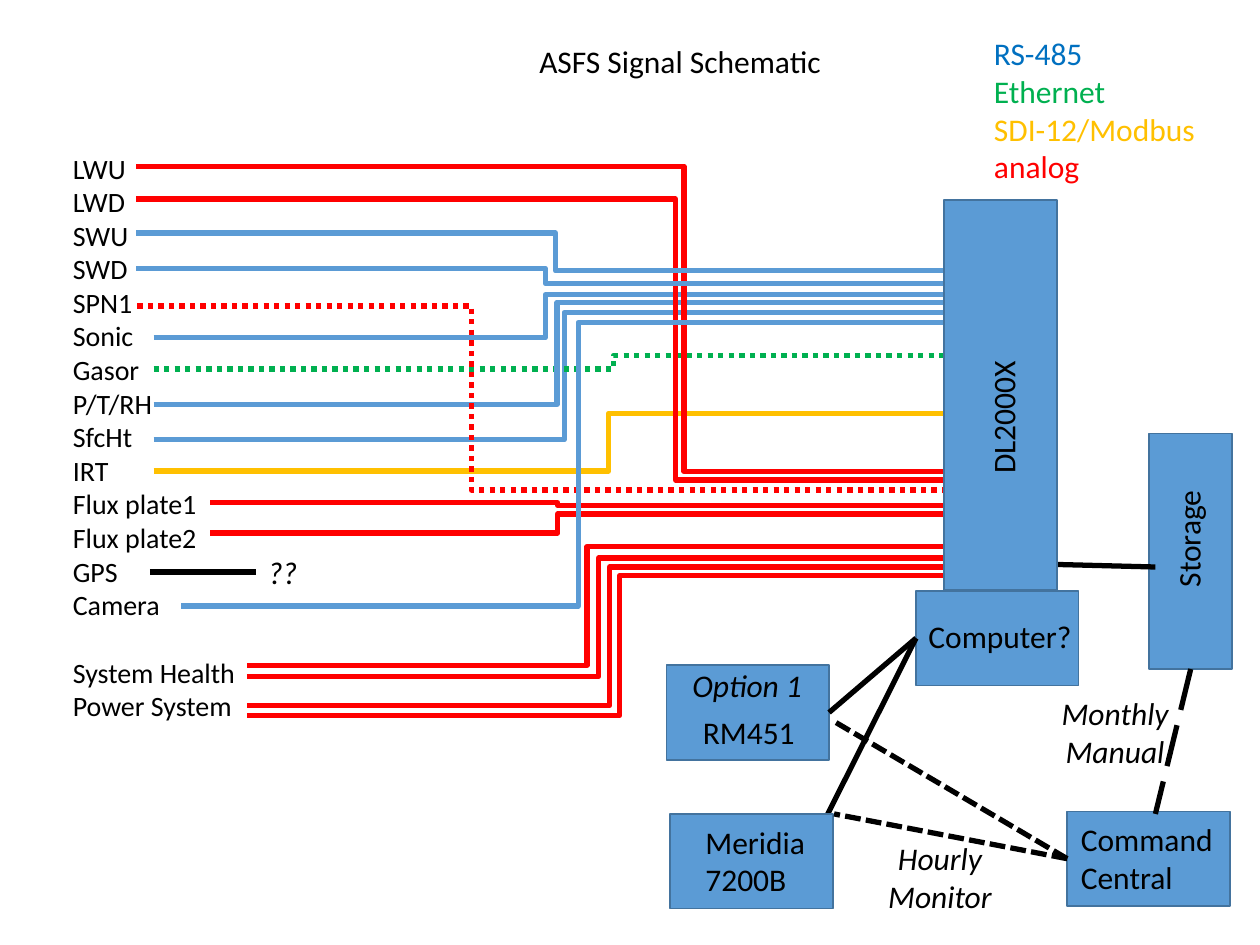
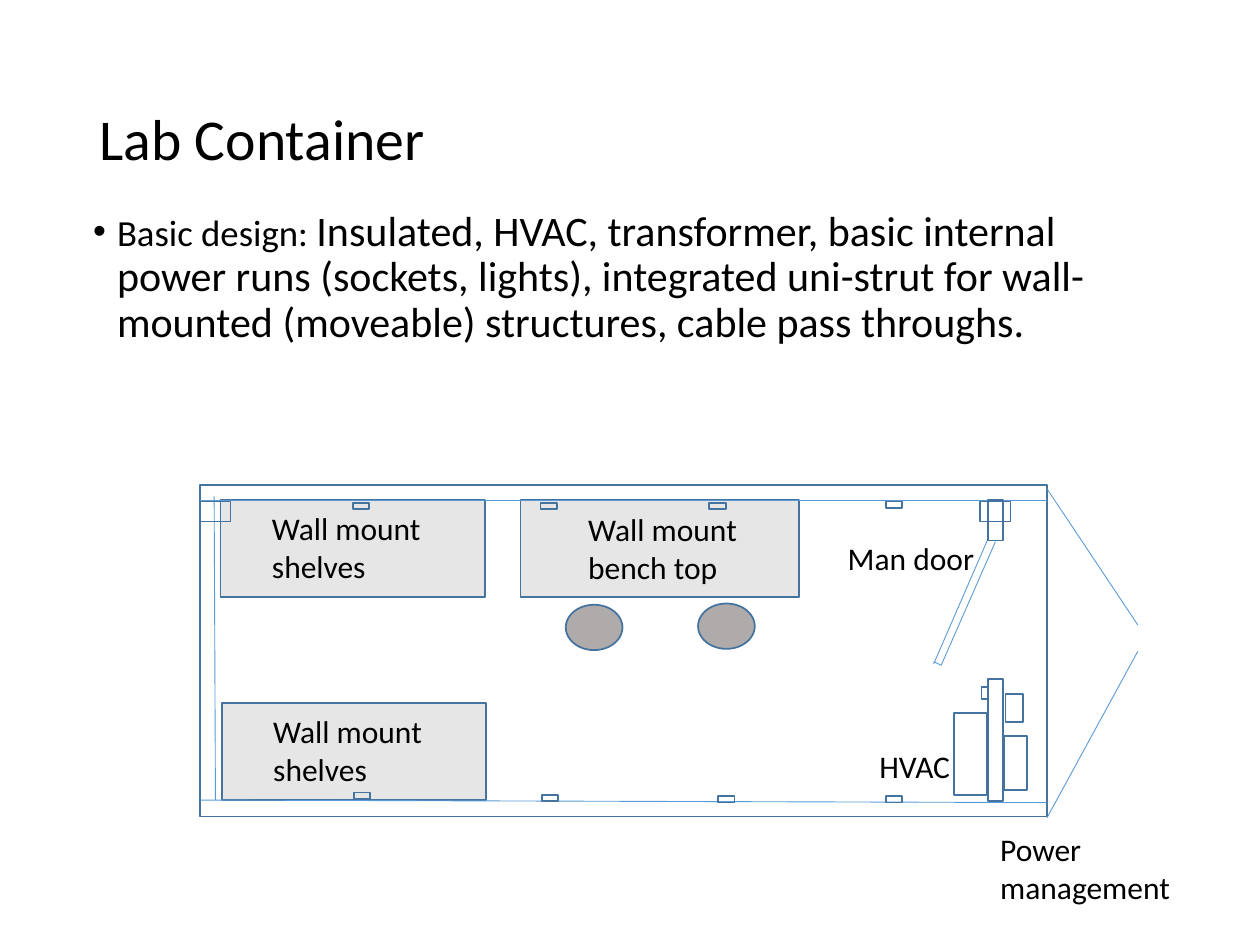
from lxml import etree
from pptx import Presentation
from pptx import util as u
from pptx.dml.color import RGBColor
from pptx.enum import dml, shapes, text
from pptx.oxml import ns

FONT = "Calibri"
CM_PER_INCH = 2.54
COLORS = {
    "black": "000000",
    "blue": "5B9BD5",
    "outline": "43739E",
    "rs485": "0070C0",
    "green": "00B050",
    "amber": "FFC000",
    "red": "FF0000",
    "furniture": "E7E6E6",
    "stool": "AFABAB",
}
DOTTED = dml.MSO_LINE.ROUND_DOT
DASHED = dml.MSO_LINE.SQUARE_DOT
LONG_DASHED = dml.MSO_LINE.LONG_DASH
LEFT, CENTER = text.PP_ALIGN.LEFT, text.PP_ALIGN.CENTER
BOTTOM_SIDE, LEFT_SIDE, RIGHT_SIDE = 2, 1, 3

SIGNALS = ["LWU", "LWD", "SWU", "SWD", "SPN1", "Sonic", "Gasor", "P/T/RH", "SfcHt",
           "IRT", "Flux plate1", "Flux plate2", "GPS", "Camera",
           "System Health", "Power System"]
LEGEND = [("RS-485", "rs485"), ("Ethernet", "green"),
          ("SDI-12/Modbus", "amber"), ("analog", "red")]
CABLES = [
    ((1.22, 2.68), 4.33, (7.75, 2.34), "blue", None),
    ((1.22, 3.49), 4.48, (7.75, 2.48), "blue", None),
    ((1.22, 2.93), 4.87, (7.75, 2.82), "green", DOTTED),
    ((1.22, 3.74), 4.83, (7.75, 3.28), "amber", None),
    ((1.22, 3.21), 4.42, (7.85, 2.40), "blue", None),
    ((1.67, 4.23), 4.43, (7.73, 4.08), "red", None),
    ((1.67, 3.99), 4.43, (7.73, 4.01), "red", None),
    ((1.96, 5.68), 4.92, (7.75, 4.57), "red", None),
    ((1.96, 5.60), 4.84, (7.73, 4.50), "red", None),
    ((1.96, 5.28), 4.66, (7.49, 4.34), "red", None),
    ((1.96, 5.37), 4.75, (7.49, 4.43), "red", None),
    ((1.08, 1.58), 5.36, (7.75, 3.81), "red", None),
    ((1.08, 1.32), 5.43, (7.73, 3.74), "red", None),
    ((1.08, 1.85), 4.41, (7.75, 2.15), "blue", None),
    ((1.08, 2.13), 4.33, (7.75, 2.25), "blue", None),
    ((1.09, 2.43), 3.74, (7.75, 3.89), "red", DOTTED),
    ((1.44, 4.81), 4.59, (7.75, 2.56), "blue", None),
]
FURNITURE = [
    ((4.13, 3.97, 2.21, 0.77), "Wall mount bench top", (4.57, 4.0)),
    ((1.75, 3.97, 2.1, 0.77), "Wall mount shelves", (2.06, 3.99)),
    ((1.76, 5.58, 2.1, 0.77), "Wall mount shelves", (2.07, 5.6)),
]
WALL_LINES = [
    ((1.59, 3.97), (8.31, 3.97)),
    ((1.59, 6.35), (8.31, 6.37)),
    ((1.70, 3.94), (1.71, 6.35)),
    ((9.03, 4.96), (8.31, 3.88)),
    ((9.03, 5.17), (8.31, 6.49)),
]
DOOR_LINES = [
    ((7.47, 5.28), (7.90, 4.30)),
    ((7.41, 5.27), (7.84, 4.28)),
    ((7.47, 5.28), (7.41, 5.25)),
]
FITTINGS = [
    (7.84, 5.39, 0.12, 0.97),
    (7.84, 3.97, 0.12, 0.32),
    (7.97, 5.84, 0.18, 0.43),
    (7.98, 5.51, 0.14, 0.22),
    (7.57, 5.66, 0.26, 0.65),
    (7.79, 5.45, 0.05, 0.10),
    (1.59, 3.98, 0.24, 0.16),
    (7.78, 3.98, 0.24, 0.16),
]
SOCKETS = [(2.81, 6.29), (4.30, 6.31), (5.70, 6.32), (7.03, 6.32),
           (2.80, 3.99), (4.29, 3.99), (5.63, 3.99), (7.03, 3.98)]
STOOLS = [(4.49, 4.80), (5.54, 4.79)]


def lengths(*inches):
    return [u.Cm(value * CM_PER_INCH) for value in inches]


def color(name):
    return RGBColor.from_string(COLORS[name])


def style(paragraph, size=18, name="black", italic=False, align=LEFT):
    paragraph.alignment = align
    font = paragraph.font
    font.name, font.size, font.italic = FONT, u.Pt(size), italic
    font.color.rgb = color(name)


def add_title(slide, title, place, size, anchor):
    shape = slide.shapes.title
    shape.left, shape.top, shape.width, shape.height = lengths(*place)
    frame = shape.text_frame
    frame.text = title
    frame.auto_size = text.MSO_AUTO_SIZE.NONE
    frame.vertical_anchor = anchor
    style(frame.paragraphs[0], size)
    return frame


def add_text(slide, lines, place, rotation=0, wrap=True, **look):
    shape = slide.shapes.add_textbox(*lengths(*place))
    shape.rotation = rotation
    frame = shape.text_frame
    frame.word_wrap = wrap
    for index, line in enumerate(lines):
        paragraph = frame.paragraphs[0] if index == 0 else frame.add_paragraph()
        paragraph.text = line
        style(paragraph, **look)
    return frame


def add_box(slide, place, fill=None, kind=shapes.MSO_SHAPE.RECTANGLE):
    shape = slide.shapes.add_shape(kind, *lengths(*place))
    shape.shadow.inherit = False
    if fill:
        shape.fill.solid()
        shape.fill.fore_color.rgb = color(fill)
    else:
        shape.fill.background()
    shape.line.color.rgb = color("outline")
    shape.line.width = u.Pt(1)
    return shape


def add_line(slide, start, end, name="black", width=3, dash=None,
             kind=shapes.MSO_CONNECTOR.STRAIGHT):
    connector = slide.shapes.add_connector(kind, *lengths(*start, *end))
    connector.line.color.rgb = color(name)
    connector.line.width = u.Pt(width)
    if dash is not None:
        connector.line.dash_style = dash
    etree.SubElement(connector._element.spPr, ns.qn("a:effectLst"))
    return connector


def add_cable(slide, start, bend, end, name, dash):
    connector = add_line(slide, start, end, name, dash=dash,
                         kind=shapes.MSO_CONNECTOR.ELBOW)
    geometry = connector._element.spPr.find(ns.qn("a:prstGeom"))
    adjustments = geometry.find(ns.qn("a:avLst"))
    if adjustments is None:
        adjustments = etree.SubElement(geometry, ns.qn("a:avLst"))
    share = (bend - start[0]) / (end[0] - start[0])
    etree.SubElement(adjustments, ns.qn("a:gd"), name="adj1",
                     fmla=f"val {round(share * 100000)}")


def add_bullet(paragraph, indent):
    properties = paragraph._p.get_or_add_pPr()
    properties.set("marL", str(indent))
    properties.set("indent", str(-indent))
    etree.SubElement(properties, ns.qn("a:buFont"), typeface="Arial")
    etree.SubElement(properties, ns.qn("a:buChar"), char="•")


def build_schematic(slide):
    title = add_title(slide, "ASFS Signal Schematic", (4.18, 0.28, 2.46, 0.4), 18,
                      text.MSO_ANCHOR.TOP)
    title.word_wrap = False

    signals = add_text(slide, SIGNALS, (0.48, 1.15, 1.51, 4.68), wrap=False, size=16)
    signals.paragraphs[SIGNALS.index("System Health")].space_before = u.Pt(19.5)
    legend = add_text(slide, [label for label, name in LEGEND],
                      (7.79, 0.22, 1.81, 1.31), wrap=False)
    for paragraph, (label, name) in zip(legend.paragraphs, LEGEND):
        paragraph.font.color.rgb = color(name)

    for cable in CABLES:
        add_cable(slide, *cable)
    add_line(slide, (1.19, 4.54), (2.03, 4.54))
    add_text(slide, ["??"], (2.03, 4.34, 0.44, 0.4), wrap=False, italic=True)

    radio = add_box(slide, (5.29, 5.28, 1.29, 0.75), "blue")
    computer = add_box(slide, (7.27, 4.69, 1.29, 0.75), "blue")
    storage = add_box(slide, (9.12, 3.44, 0.66, 1.87), "blue")
    add_line(slide, (8.39, 4.48), (9.17, 4.5))
    add_box(slide, (7.49, 1.59, 0.9, 3.09), "blue")
    satellite_link = add_line(slide, (7.27, 5.05), (6.57, 6.46))
    satellite_link.begin_connect(computer, LEFT_SIDE)
    add_box(slide, (5.32, 6.46, 1.29, 0.75), "blue")
    command = add_box(slide, (8.47, 6.44, 1.29, 0.75), "blue")

    radio_link = add_line(slide, (7.27, 5.05), (6.58, 5.68))
    radio_link.begin_connect(computer, LEFT_SIDE)
    radio_link.end_connect(radio, RIGHT_SIDE)
    for end in ((6.62, 6.46), (6.61, 5.72)):
        monitor_link = add_line(slide, (8.48, 6.81), end, dash=DASHED)
        monitor_link.begin_connect(command, LEFT_SIDE)
    manual_link = add_line(slide, (9.45, 5.32), (9.17, 6.46), dash=LONG_DASHED)
    manual_link.begin_connect(storage, BOTTOM_SIDE)

    add_text(slide, ["RM451"], (5.48, 5.61, 1.19, 0.4))
    add_text(slide, ["Computer?"], (7.27, 4.85, 1.38, 0.4))
    add_text(slide, ["Storage"], (8.94, 4.07, 0.98, 0.4), rotation=270)
    add_text(slide, ["DL2000X"], (7.13, 2.83, 1.66, 0.4), rotation=270)
    add_text(slide, ["Meridia 7200B"], (5.5, 6.48, 1.19, 0.71))
    add_text(slide, ["Command Central"], (8.48, 6.46, 1.36, 0.71))
    for note, place in (("Option 1", (5.34, 5.24, 1.18, 0.4)),
                        ("Monthly Manual", (8.26, 5.46, 1.18, 0.71)),
                        ("Hourly Monitor", (6.87, 6.61, 1.18, 0.71))):
        add_text(slide, [note], place, italic=True, align=CENTER)


def build_container(slide):
    title = add_title(slide, "Lab Container", (0.69, 0.4, 8.62, 1.45), 33,
                      text.MSO_ANCHOR.MIDDLE)
    title.paragraphs[0].line_spacing = 0.9

    design = add_text(slide, ["Basic design: "], (0.64, 1.62, 8.62, 4.76), size=24)
    paragraph = design.paragraphs[0]
    paragraph.runs[0].font.size = u.Pt(21)
    paragraph.add_run().text = (
        "Insulated, HVAC, transformer, basic internal power runs (sockets, lights), "
        "integrated uni-strut for wall-mounted (moveable) structures, "
        "cable pass throughs.")
    paragraph.line_spacing = 0.9
    paragraph.space_before = u.Pt(7.5)
    add_bullet(paragraph, *lengths(0.19))

    add_box(slide, (1.59, 3.85, 6.72, 2.63))
    for place, label, corner in FURNITURE:
        add_box(slide, place, "furniture")
        add_text(slide, [label], (*corner, 1.42, 0.71))
    for start, end in WALL_LINES + DOOR_LINES:
        add_line(slide, start, end, "blue", 0.5)
    for place in FITTINGS:
        add_box(slide, place)
    for corner in SOCKETS:
        add_box(slide, (*corner, 0.13, 0.05))
    for corner in STOOLS:
        add_box(slide, (*corner, 0.45, 0.36), "stool", shapes.MSO_SHAPE.OVAL)

    add_text(slide, ["Power management"], (7.84, 6.54, 1.57, 0.71))
    add_text(slide, ["HVAC"], (6.88, 5.88, 0.82, 0.4))
    add_text(slide, ["Man door"], (6.63, 4.23, 1.26, 0.4))


def main():
    presentation = Presentation()
    presentation.slide_width, presentation.slide_height = lengths(10, 7.5)
    title_only = presentation.slide_layouts.get_by_name("Title Only")
    for build in (build_schematic, build_container):
        build(presentation.slides.add_slide(title_only))
    presentation.save("out.pptx")


if __name__ == "__main__":
    main()
